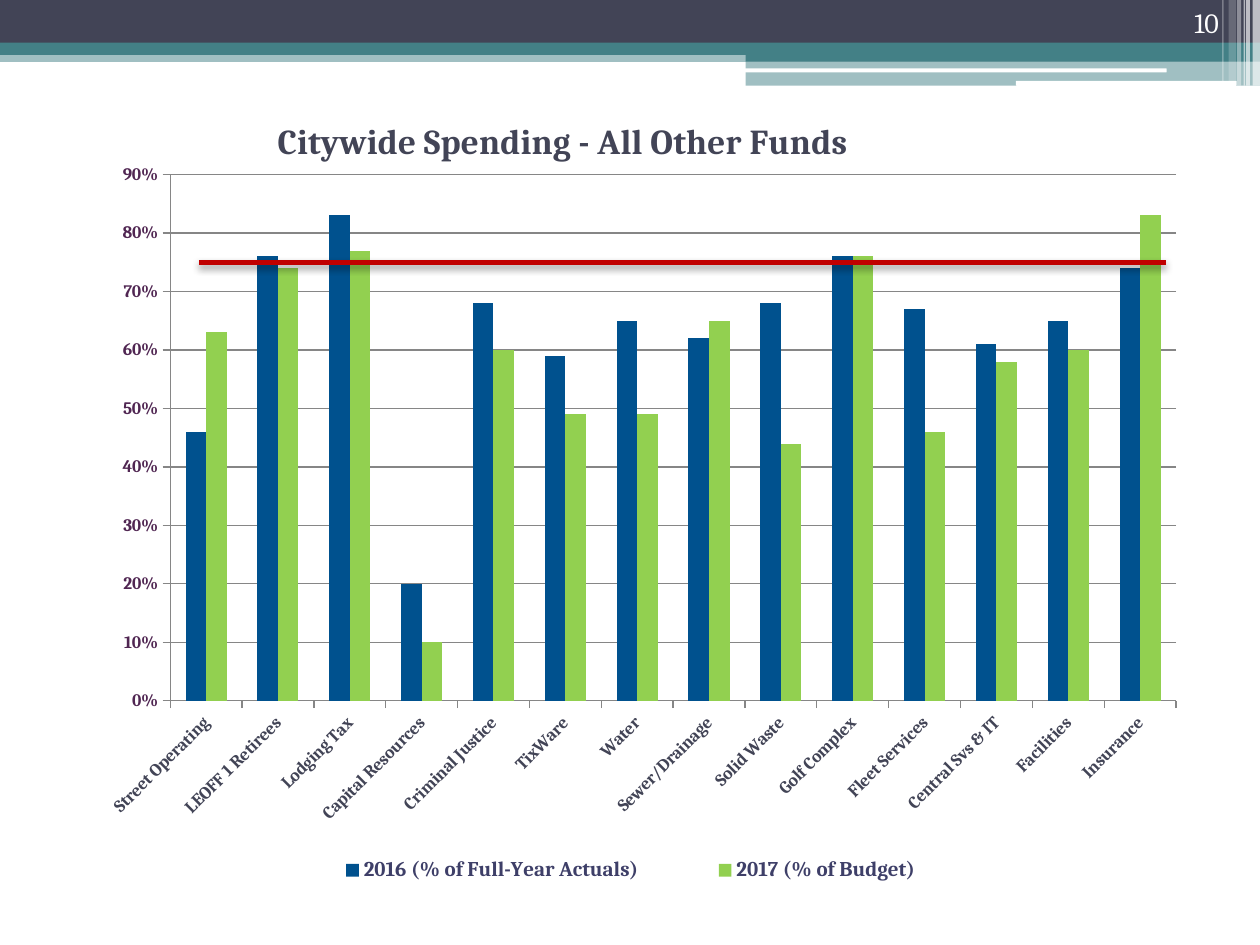
import pptx
import pptx.chart.data
import pptx.dml.color
import pptx.enum.chart
import pptx.enum.shapes
import pptx.enum.text
import pptx.oxml
import pptx.oxml.ns
import pptx.util
from lxml import etree

Cm = pptx.util.Cm
Pt = pptx.util.Pt
qn = pptx.oxml.ns.qn
RGBColor = pptx.dml.color.RGBColor
SHAPE = pptx.enum.shapes.MSO_SHAPE

WHITE = RGBColor(0xFF, 0xFF, 0xFF)
BLACK = RGBColor(0x00, 0x00, 0x00)
SLATE = RGBColor(0x42, 0x44, 0x56)
TEAL = RGBColor(0x43, 0x80, 0x86)
PLUM = RGBColor(0x50, 0x26, 0x52)
INDIGO = RGBColor(0x3E, 0x3F, 0x68)
GRAY = RGBColor(0x86, 0x86, 0x86)
BLUE = RGBColor(0x00, 0x51, 0x8E)
GREEN = RGBColor(0x92, 0xD0, 0x50)
RED = RGBColor(0xC0, 0x00, 0x00)

CHART_WIDTH, CHART_HEIGHT = 24.43, 16.18
BANDS = [
    (0, 1.02, 25.4, 0.23, TEAL, 50),
    (0, 0, 25.4, 0.87, SLATE, 100),
    (0, 0.86, 25.4, 0.25, TEAL, 100),
    (15.03, 0.99, 10.37, 0.25, TEAL, 100),
    (15.03, 1.23, 10.37, 0.5, TEAL, 50),
]
ROUNDED_RULES = [(15.01, 1.38, 8.51, 0.08), (20.48, 1.63, 4.45, 0.1)]
STRIPES = [
    (25.25, 0.15, 1.73, 65),
    (25.12, 0.08, 1.73, 65),
    (25.07, 0.03, 1.73, 60),
    (24.94, 0.08, 1.73, 40),
    (24.77, 0.15, 1.63, 20),
    (24.64, 0.03, 1.63, 30),
]
SPENDING = [
    ("Street Operating", 0.46, 0.63),
    ("LEOFF 1 Retirees", 0.76, 0.74),
    ("Lodging Tax", 0.83, 0.77),
    ("Capital Resources", 0.2, 0.1),
    ("Criminal Justice", 0.68, 0.6),
    ("TixWare", 0.59, 0.49),
    ("Water", 0.65, 0.49),
    ("Sewer/Drainage", 0.62, 0.65),
    ("Solid Waste", 0.68, 0.44),
    ("Golf Complex", 0.76, 0.76),
    ("Fleet Services", 0.67, 0.46),
    ("Central Svs & IT", 0.61, 0.58),
    ("Facilities", 0.65, 0.6),
    ("Insurance", 0.74, 0.83),
]
SERIES_COLORS = [BLUE, GREEN]


class SlideBuilder:
    font_name = "Cambria"

    def __init__(self, slide):
        self.slide = slide

    def style(self, font, size, color, bold=False):
        font.name = self.font_name
        font.size = Pt(size)
        font.color.rgb = color
        font.bold = bold

    def block(self, left, top, width, height, color, opacity=100, kind=SHAPE.RECTANGLE):
        block = self.slide.shapes.add_shape(kind, Cm(left), Cm(top), Cm(width), Cm(height))
        block.shadow.inherit = False
        block.fill.solid()
        block.fill.fore_color.rgb = color
        block.line.fill.background()
        if opacity < 100:
            tint = block._element.spPr.find(qn("a:solidFill"))[0]
            etree.SubElement(tint, qn("a:alpha"), val=str(opacity * 1000))

    def page_number(self, text, left, top, width, height):
        frame = self.slide.shapes.add_textbox(Cm(left), Cm(top), Cm(width), Cm(height)).text_frame
        frame.word_wrap = True
        frame.vertical_anchor = pptx.enum.text.MSO_ANCHOR.BOTTOM
        paragraph = frame.paragraphs[0]
        paragraph.text = text
        paragraph.alignment = pptx.enum.text.PP_ALIGN.RIGHT
        self.style(paragraph.font, 16, WHITE)

    def place(self, parent, index, target=None, **lengths):
        for previous in parent.findall(qn("c:layout")):
            parent.remove(previous)
        layout = etree.Element(qn("c:layout"))
        manual = etree.SubElement(layout, qn("c:manualLayout"))
        if target:
            etree.SubElement(manual, qn("c:layoutTarget"), val=target)
        for mode in ("xMode", "yMode"):
            etree.SubElement(manual, qn("c:" + mode), val="edge")
        for side, length in lengths.items():
            whole = CHART_WIDTH if side in "xw" else CHART_HEIGHT
            etree.SubElement(manual, qn("c:" + side), val=str(length / whole))
        parent.insert(index, layout)

    def axis(self, axis, color):
        axis.major_tick_mark = pptx.enum.chart.XL_TICK_MARK.OUTSIDE
        axis.format.line.color.rgb = GRAY
        self.style(axis.tick_labels.font, 10, color, True)

    def column_chart(self, title, names, rows, left, top):
        spending = pptx.chart.data.CategoryChartData(number_format="0%")
        spending.categories = [row[0] for row in rows]
        for column, name in enumerate(names, 1):
            spending.add_series(name, [row[column] for row in rows])
        chart = self.slide.shapes.add_chart(
            pptx.enum.chart.XL_CHART_TYPE.COLUMN_CLUSTERED,
            Cm(left), Cm(top), Cm(CHART_WIDTH), Cm(CHART_HEIGHT), spending).chart
        self.style(chart.font, 10, BLACK)

        chart.has_title = True
        heading = chart.chart_title.text_frame.paragraphs[0]
        heading.text = title
        self.style(heading.font, 20, SLATE, True)
        title_element = chart.chart_title._element
        self.place(title_element, 1, x=5.27, y=0.16)
        title_element.find(qn("c:overlay")).set("val", "1")

        columns = chart.plots[0]
        columns.gap_width = 150
        columns.overlap = 0
        columns.vary_by_categories = False
        for series, color in zip(columns.series, SERIES_COLORS):
            series.format.fill.solid()
            series.format.fill.fore_color.rgb = color
            series.invert_if_negative = False
        self.place(chart._chartSpace.chart.plotArea, 0, "inner", x=3.23, y=1.41, w=20.28, h=10.61)

        funds = chart.category_axis
        self.axis(funds, SLATE)
        funds._element.find(qn("c:txPr")).find(qn("a:bodyPr")).set("rot", "-2700000")
        percent = chart.value_axis
        self.axis(percent, PLUM)
        percent.minimum_scale, percent.maximum_scale, percent.major_unit = 0, 0.9, 0.1
        percent.tick_labels.number_format = "0%"
        percent.tick_labels.number_format_is_linked = False
        percent.has_major_gridlines = True
        percent.major_gridlines.format.line.color.rgb = GRAY

        chart.has_legend = True
        chart.legend.position = pptx.enum.chart.XL_LEGEND_POSITION.BOTTOM
        chart.legend.include_in_layout = False
        self.style(chart.legend.font, 12, INDIGO, True)
        self.place(chart.legend._element, 1, x=5.3, y=15.03, w=14.43, h=0.81)

    def target_line(self, start, end, level):
        line = self.slide.shapes.add_connector(
            pptx.enum.shapes.MSO_CONNECTOR.STRAIGHT, Cm(start), Cm(level), Cm(end), Cm(level))
        line.line.color.rgb = RED
        line.line.width = Pt(2.5)
        effects = etree.SubElement(line._element.spPr, qn("a:effectLst"))
        shadow = etree.SubElement(
            effects, qn("a:outerShdw"), blurRad=str(Pt(4)), dist=str(Pt(2)),
            dir="5400000", rotWithShape="0")
        shade = etree.SubElement(shadow, qn("a:srgbClr"), val=str(BLACK))
        etree.SubElement(shade, qn("a:alpha"), val="45000")


def main():
    deck = pptx.Presentation()
    deck.slide_width, deck.slide_height = Cm(25.4), Cm(19.05)
    builder = SlideBuilder(deck.slides.add_slide(deck.slide_layouts[6]))
    for band in BANDS:
        builder.block(*band)
    for rule in ROUNDED_RULES:
        builder.block(*rule, WHITE, kind=SHAPE.ROUNDED_RECTANGLE)
    for left, width, height, opacity in STRIPES:
        builder.block(left, 0, width, height, WHITE, opacity)
    builder.page_number("10", 22.71, 0, 2.11, 0.91)
    builder.column_chart(
        "Citywide Spending - All Other Funds",
        ["2016 (% of Full-Year Actuals)", "2017 (% of Budget)"],
        SPENDING, 0.2, 2.11)
    builder.target_line(4.01, 23.5, 5.29)
    deck.save("out.pptx")


if __name__ == "__main__":
    main()
